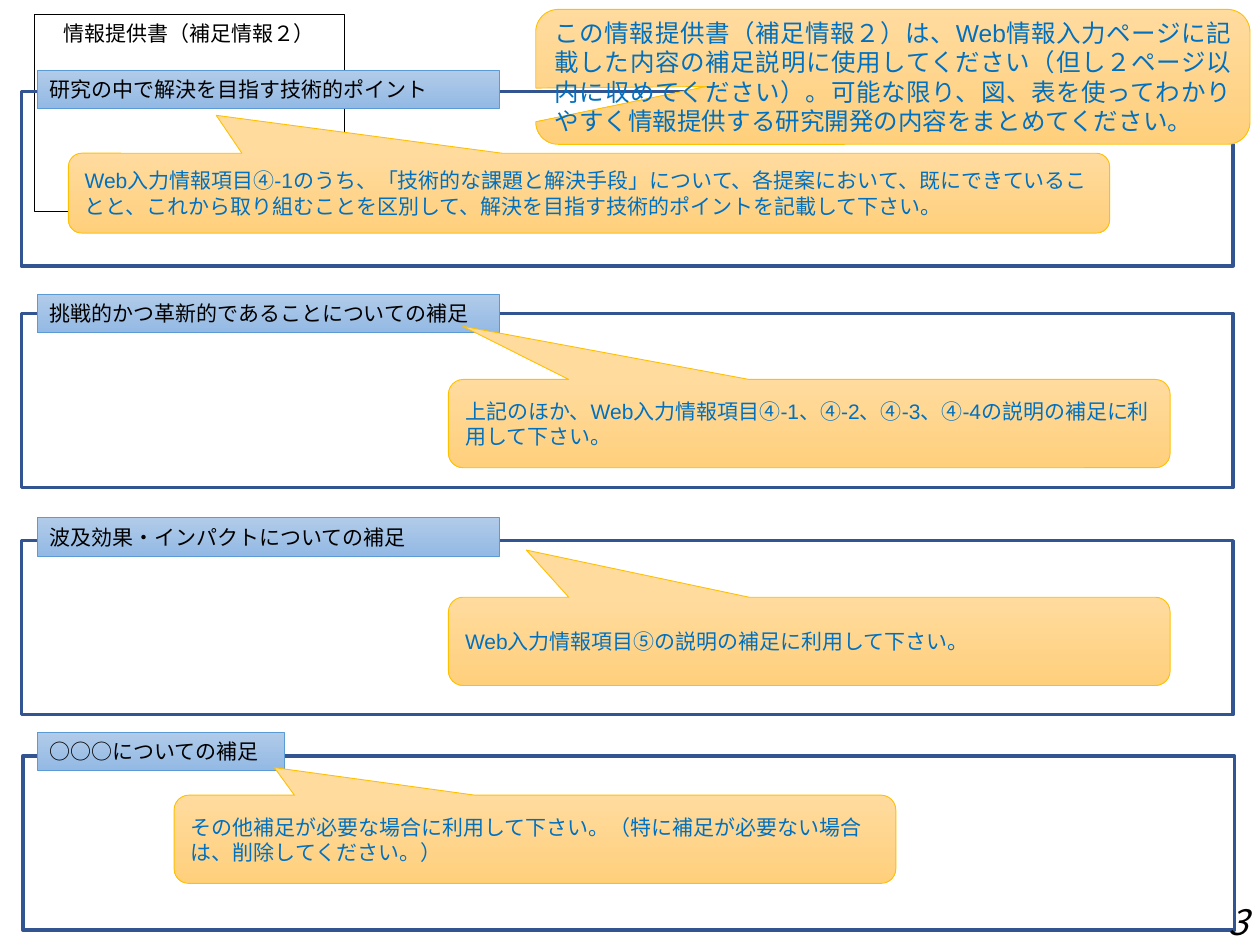
from lxml.etree import SubElement
from pptx import Presentation
from pptx.dml.color import RGBColor
from pptx.enum.shapes import MSO_SHAPE as SHAPE
from pptx.enum.text import MSO_ANCHOR as ANCHOR, MSO_AUTO_SIZE as AUTO, PP_ALIGN as ALIGN
from pptx.oxml.ns import qn
from pptx.util import Cm, Pt

COLORS = {
    "frame": "325491", "tag_top": "B1CBE9", "tag_bottom": "93B9E4", "tag_line": "5B9BD5",
    "note_top": "FFDB9E", "note_bottom": "FFD07C", "note_line": "FFC000",
    "note_text": "0070C0", "black": "000000",
}
EA_FONT = "Noto Sans CJK JP"
SECTIONS = [
    (10.9, 0.43, 10.44, 9.32, "波及効果・インパクトについての補足"),
    (15.24, 0.46, 14.76, 4.98, "○○○についての補足"),
    (6.32, 0.43, 5.94, 9.32, "挑戦的かつ革新的であることについての補足"),
    (1.85, 0.43, 1.42, 9.32, "研究の中で解決を目指す技術的ポイント"),
]
NOTES = [
    ((9.04, 12.04, 14.55, 1.78), (-0.392, -1.034), 12, ALIGN.LEFT,
     "Web入力情報項目⑤の説明の補足に利用して下さい。"),
    ((9.04, 7.65, 14.55, 1.78), (-0.48, -1.102), 12, ALIGN.LEFT,
     "上記のほか、Web入力情報項目④-1、④-2、④-3、④-4の説明の補足に利用して下さい。"),
    ((3.51, 16.03, 14.55, 1.78), (-0.361, -0.812), 12, ALIGN.LEFT,
     "その他補足が必要な場合に利用して下さい。（特に補足が必要ない場合は、削除してください。）"),
    ((1.38, 3.09, 20.99, 1.61), (-0.358, -0.975), 12, ALIGN.LEFT,
     "Web入力情報項目④-1のうち、「技術的な課題と解決手段」について、各提案において、"
     "既にできていることと、これから取り組むことを区別して、"
     "解決を目指す技術的ポイントを記載して下さい。"),
    ((10.8, 0.19, 14.4, 2.72), (-0.261, 0.072), 14, ALIGN.JUSTIFY,
     "この情報提供書（補足情報２）は、Web情報入力ページに記載した内容の補足説明に使用してください"
     "（但し２ページ以内に収めてください）。可能な限り、図、表を使ってわかりやすく"
     "情報提供する研究開発の内容をまとめてください。"),
]


def rgb(name):
    """Return the named colour."""
    return RGBColor.from_string(COLORS[name])


def place(sp, box):
    """Move and size a shape in centimetres."""
    sp.left, sp.top, sp.width, sp.height = (Cm(v) for v in box)


def set_line(sp, color, width):
    """Outline a shape."""
    sp.line.color.rgb = rgb(color)
    sp.line.width = Pt(width)


def set_gradient(sp, kind):
    """Fill a shape from top to bottom."""
    sp.fill.gradient()
    sp.fill.gradient_angle = 270
    for stop, end in zip(sp.fill.gradient_stops, ("top", "bottom")):
        stop.color.rgb = rgb(f"{kind}_{end}")


def set_text(sp, text, size, font, color="black", align=ALIGN.LEFT, anchor=ANCHOR.TOP):
    """Write one formatted paragraph and return its run."""
    tf = sp.text_frame
    tf.text = text
    tf.word_wrap = True
    tf.vertical_anchor = anchor
    p = tf.paragraphs[0]
    p.alignment = align
    r = p.runs[0]
    r.font.size, r.font.name = Pt(size), font
    r.font.color.rgb = rgb(color)
    SubElement(r.font._element, qn("a:ea")).set("typeface", EA_FONT)
    return r


def add_box(s, kind, box):
    """Add a preset shape without shadow."""
    sp = s.shapes.add_shape(kind, *(Cm(v) for v in box))
    sp.shadow.inherit = False
    return sp


def add_title(s, text):
    """Put the document title in the title placeholder."""
    sp = s.shapes.title
    place(sp, (0.69, 0.29, 6.25, 0.77))
    set_line(sp, "black", 0.75)
    set_text(sp, text, 12, "Calibri", align=ALIGN.CENTER)
    sp.text_frame.auto_size = AUTO.SHAPE_TO_FIT_TEXT


def add_section(s, top, left, tag_top, tag_width, heading):
    """Add an empty frame with its heading tag."""
    frame = add_box(s, SHAPE.RECTANGLE, (left, top, 24.43, 3.51))
    frame.fill.background()
    set_line(frame, "frame", 2)
    tag = add_box(s, SHAPE.RECTANGLE, (0.75, tag_top, tag_width, 0.77))
    set_gradient(tag, "tag")
    set_line(tag, "tag_line", 0.5)
    set_text(tag, heading, 12, "Calibri")
    tag.text_frame.auto_size = AUTO.SHAPE_TO_FIT_TEXT


def add_note(s, box, tip, size, align, text):
    """Add a callout with guidance for the writer."""
    sp = add_box(s, SHAPE.ROUNDED_RECTANGULAR_CALLOUT, box)
    for i, value in enumerate((*tip, 0.167)):
        sp.adjustments[i] = value
    set_gradient(sp, "note")
    set_line(sp, "note_line", 0.5)
    set_text(sp, text, size, "Arial", "note_text", align, ANCHOR.MIDDLE)


def add_page_number(s, number):
    """Add the italic page number."""
    sp = s.shapes.add_textbox(Cm(24.51), Cm(18.03), Cm(0.86), Cm(1.02))
    r = set_text(sp, number, 20, EA_FONT)
    r.font.italic = True
    sp.text_frame.word_wrap = False


def main():
    """Build and save the slide."""
    prs = Presentation()
    prs.slide_width, prs.slide_height = Cm(25.4), Cm(19.05)
    s = prs.slides.add_slide(prs.slide_layouts[5])
    add_title(s, "情報提供書（補足情報２）")
    for section in SECTIONS:
        add_section(s, *section)
    for note in NOTES:
        add_note(s, *note)
    add_page_number(s, "3")
    prs.save("out.pptx")


if __name__ == "__main__":
    main()
